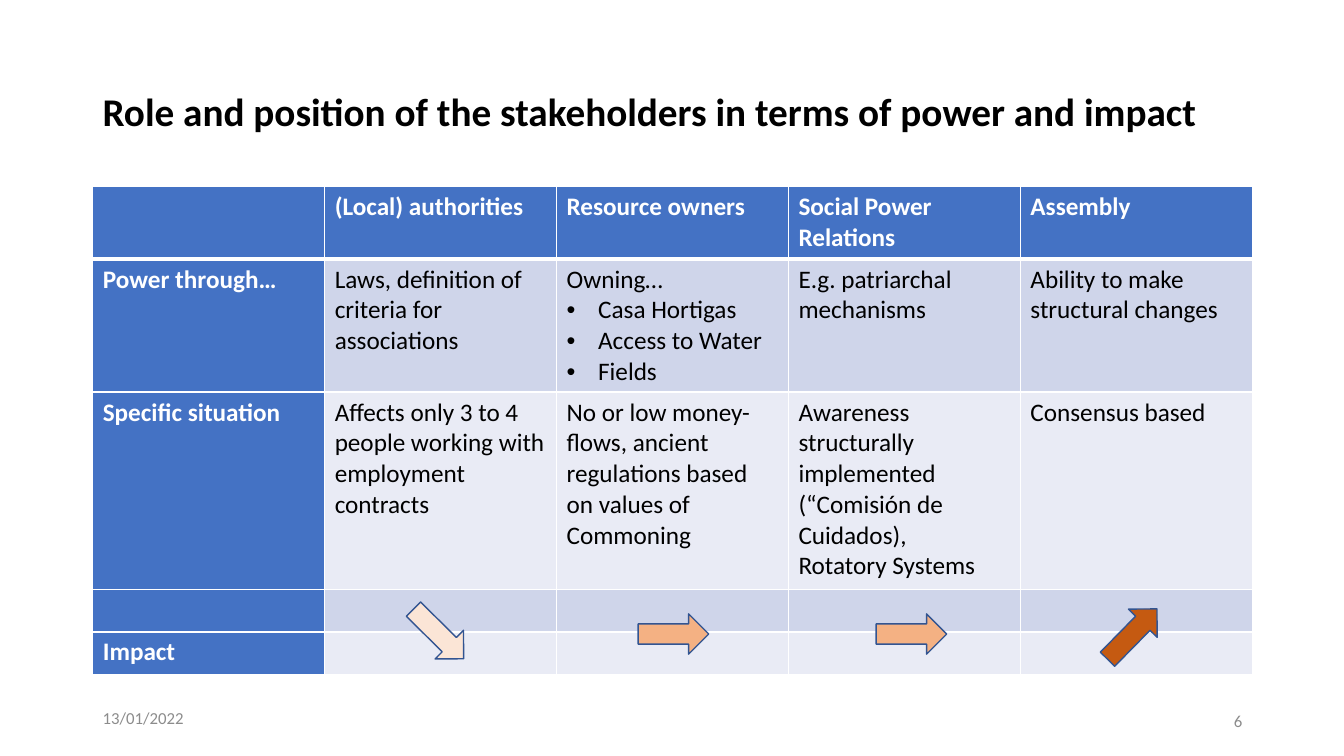
from pptx import Presentation
from pptx.dml.color import RGBColor as RGB
from pptx.enum.shapes import MSO_SHAPE as Shape
from pptx.enum.text import MSO_ANCHOR as Anchor, PP_ALIGN as Align
from pptx.oxml import parse_xml
from pptx.oxml.ns import nsdecls
from pptx.util import Emu, Pt

SCALE = 9144  # EMU per px, 100 px to the inch
WHITE = RGB(0xFF, 0xFF, 0xFF)
BLACK = RGB(0, 0, 0)
GREY = RGB(0x8C, 0x8C, 0x8C)
BLUE = RGB(0x44, 0x72, 0xC4)
NAVY = RGB(0x32, 0x54, 0x91)
BANDS = RGB(0xE9, 0xEB, 0xF5), RGB(0xCF, 0xD5, 0xEA)
PALE = RGB(0xFB, 0xE5, 0xD6)
PEACH = RGB(0xF4, 0xB1, 0x83)
RUST = RGB(0xC5, 0x5A, 0x11)

TITLE = "Role and position of the stakeholders in terms of power and impact"
BULLET = "• "
ROWS = [
    ["", "(Local) authorities", "Resource owners", "Social Power Relations", "Assembly"],
    ["Power through…", "Laws, definition of criteria for associations",
     "Owning…\n• Casa Hortigas\n• Access to Water\n• Fields",
     "E.g. patriarchal mechanisms", "Ability to make structural changes"],
    ["Specific situation", "Affects only 3 to 4 people working with employment contracts",
     "No or low money-flows, ancient regulations based on values of Commoning",
     "Awareness structurally implemented (“Comisión de Cuidados),\nRotatory Systems",
     "Consensus based"],
    [""] * 5,
    ["Impact"] + [""] * 4,
]
HEIGHTS = [72, 132, 196, 42, 42]
ARROWS = [(400, 44.7, PALE), (633, 0, PEACH), (869, 0, PEACH), (1088, 314.5, RUST)]


def px(*sizes):
    return [Emu(size * SCALE) for size in sizes]


class Page:
    def __init__(self, deck, font):
        self.slide = deck.slides.add_slide(deck.slide_layouts[6])
        self.shapes = self.slide.shapes
        self.font = font

    def text(self, para, words, color, **style):
        run = para.add_run()
        run.text = words
        for key, value in {"name": self.font, **style}.items():
            setattr(run.font, key, value)
        run.font.color.rgb = color

    def label(self, box, words, color, align=Align.LEFT, space=1.0, **style):
        frame = self.shapes.add_textbox(*px(*box)).text_frame
        frame.word_wrap = True
        frame.vertical_anchor = Anchor.MIDDLE
        para = frame.paragraphs[0]
        para.alignment = align
        para.line_spacing = space
        self.text(para, words, color, **style)

    def edge(self, cell, side, width):
        cell._tc.get_or_add_tcPr().append(parse_xml(
            f'<a:ln{side} {nsdecls("a")} w="{Pt(width)}"><a:solidFill>'
            f'<a:srgbClr val="{WHITE}"/></a:solidFill></a:ln{side}>'))

    def cell(self, cell, words, row, col):
        head = row == 0 or col == 0
        thick = {"T": row == 1, "B": row == 0}
        for side in "LRTB":
            self.edge(cell, side, 3 if thick.get(side) else 1)
        cell.fill.solid()
        cell.fill.fore_color.rgb = BLUE if head else BANDS[row % 2]
        frame = cell.text_frame
        for num, line in enumerate(words.split("\n") if words else []):
            para = frame.add_paragraph() if num else frame.paragraphs[0]
            if line.startswith(BULLET):
                self.bullet(para)
            self.text(para, line.removeprefix(BULLET), WHITE if head else BLACK,
                      size=Pt(18), bold=head)

    def bullet(self, para):
        props = para._p.get_or_add_pPr()
        props.set("marL", "285750")
        props.set("indent", "-285750")
        for part in ('buFont {} typeface="Arial"', 'buChar {} char="•"'):
            props.append(parse_xml(f'<a:{part.format(nsdecls("a"))}/>'))

    def table(self, box, rows, heights):
        table = self.shapes.add_table(len(rows), len(rows[0]), *px(*box)).table
        for row, (line, height) in enumerate(zip(rows, heights)):
            table.rows[row].height = px(height)[0]
            for col, words in enumerate(line):
                self.cell(table.cell(row, col), words, row, col)

    def arrow(self, box, turn, color):
        shape = self.shapes.add_shape(Shape.RIGHT_ARROW, *px(*box))
        shape.rotation = turn
        shape.shadow.inherit = False
        shape.fill.solid()
        shape.fill.fore_color.rgb = color
        shape.line.color.rgb = NAVY
        shape.line.width = Pt(1)


def main():
    deck = Presentation()
    deck.slide_width, deck.slide_height = px(1333, 750)
    page = Page(deck, "Calibri")

    # Footer: date and page number
    page.label((92, 692, 300, 40), "13/01/2022", GREY, size=Pt(12))
    page.label((942, 695, 300, 40), "6", GREY, Align.RIGHT, size=Pt(12))

    # Title
    page.label((92, 40, 1150, 145), TITLE, BLACK, space=0.9, size=Pt(28), bold=True)

    # Stakeholder table
    page.table((92, 185, 1150, sum(HEIGHTS)), ROWS, HEIGHTS)

    # Impact arrows
    for left, turn, color in ARROWS:
        page.arrow((left, 609, 70, 40), turn, color)

    deck.save("out.pptx")


if __name__ == "__main__":
    main()
